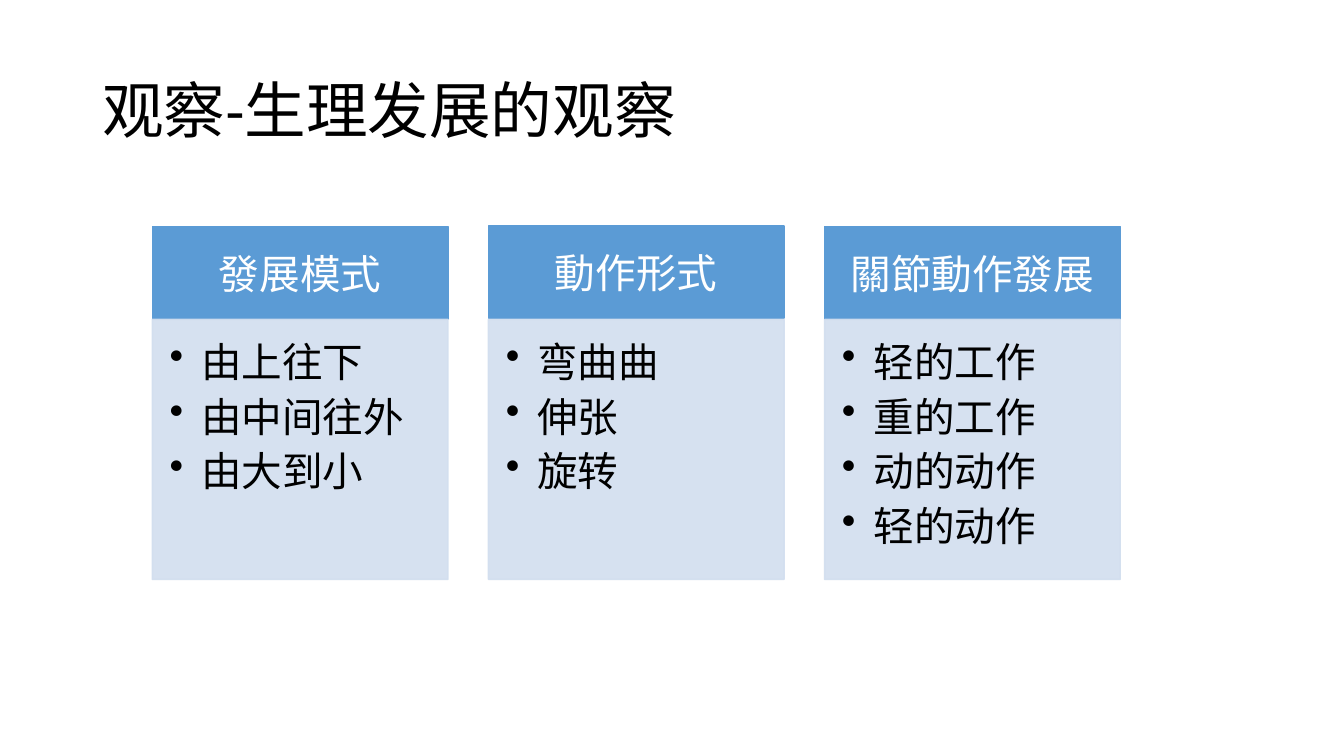
from dataclasses import dataclass

import lxml.etree
import pptx
import pptx.dml.color
import pptx.enum.shapes
import pptx.enum.text
import pptx.oxml.ns
import pptx.util

Pt = pptx.util.Pt
RGB = pptx.dml.color.RGBColor
Align = pptx.enum.text.PP_ALIGN
Anchor = pptx.enum.text.MSO_ANCHOR
qn = pptx.oxml.ns.qn


@dataclass(frozen=True)
class Theme:
    font: str = "Calibri"
    title_size: float = 44
    text_size: float = 29
    dark: RGB = RGB(0x00, 0x00, 0x00)
    light: RGB = RGB(0xFF, 0xFF, 0xFF)
    header: RGB = RGB(0x5B, 0x9B, 0xD5)
    body: RGB = RGB(0xD2, 0xDE, 0xEF)
    body_opacity: int = 90


@dataclass(frozen=True)
class Column:
    heading: str
    items: tuple[str, ...]
    header_top: float = 162


THEME = Theme()
COLUMNS = (
    Column("發展模式", ("由上往下", "由中间往外", "由大到小")),
    Column("動作形式", ("弯曲曲", "伸张", "旋转"), header_top=161.3),
    Column("關節動作發展", ("轻的工作", "重的工作", "动的动作", "轻的动作")),
)

# Column grid, in points
LEFT, STEP, WIDTH = 108.8, 240.1, 211.2
HEADER_HEIGHT, BODY_TOP, BODY_HEIGHT = 65.8, 228.1, 185.8
BULLET_INDENT = 22.5


def add_run(p, text: str, size: float, color: RGB) -> None:
    r = p.add_run()
    r.text = text
    r.font.name = THEME.font
    r.font.size = Pt(size)
    r.font.color.rgb = color


def set_frame(tf, anchor, insets: tuple[float, float, float, float]) -> None:
    tf.word_wrap = True
    tf.vertical_anchor = anchor
    tf.margin_left, tf.margin_top, tf.margin_right, tf.margin_bottom = map(Pt, insets)


def add_box(slide, left: float, top: float, height: float, color: RGB, opacity: int = 100):
    sp = slide.shapes.add_shape(pptx.enum.shapes.MSO_SHAPE.RECTANGLE,
                                Pt(left), Pt(top), Pt(WIDTH), Pt(height))
    sp.shadow.inherit = False
    sp.fill.solid()
    sp.fill.fore_color.rgb = color
    sp.line.color.rgb = color
    sp.line.width = Pt(1)
    if opacity < 100:
        for clr in sp._element.spPr.iter(qn("a:srgbClr")):
            lxml.etree.SubElement(clr, qn("a:alpha"), val=str(opacity * 1000))
    return sp


def add_bullet(p) -> None:
    pPr = p._p.get_or_add_pPr()
    pPr.set("marL", str(Pt(BULLET_INDENT)))
    pPr.set("indent", str(-Pt(BULLET_INDENT)))
    lxml.etree.SubElement(pPr, qn("a:buChar"), char="•")


def add_title(slide, text: str) -> None:
    sp = slide.shapes.add_textbox(Pt(66), Pt(28.8), Pt(828), Pt(104.4))
    set_frame(sp.text_frame, Anchor.MIDDLE, (7.2, 3.6, 7.2, 3.6))
    p = sp.text_frame.paragraphs[0]
    p.line_spacing = 0.9
    add_run(p, text, THEME.title_size, THEME.dark)


def add_column(slide, column: Column, left: float) -> None:
    # Heading
    sp = add_box(slide, left, column.header_top, HEADER_HEIGHT, THEME.header)
    set_frame(sp.text_frame, Anchor.MIDDLE, (16.5, 9.4, 16.5, 9.4))
    p = sp.text_frame.paragraphs[0]
    p.alignment = Align.CENTER
    add_run(p, column.heading, THEME.text_size, THEME.light)

    # Bulleted list
    sp = add_box(slide, left, BODY_TOP, BODY_HEIGHT, THEME.body, THEME.body_opacity)
    tf = sp.text_frame
    set_frame(tf, Anchor.TOP, (12.4, 12.4, 16.5, 18))
    for i, item in enumerate(column.items):
        p = tf.add_paragraph() if i else tf.paragraphs[0]
        p.alignment = Align.LEFT
        p.space_after = Pt(0.15 * THEME.text_size)
        add_bullet(p)
        add_run(p, item, THEME.text_size, THEME.dark)


def main() -> None:
    prs = pptx.Presentation()
    prs.slide_width, prs.slide_height = Pt(960), Pt(540)
    slide = prs.slides.add_slide(prs.slide_layouts[6])
    add_title(slide, "观察-生理发展的观察")
    for i, column in enumerate(COLUMNS):
        add_column(slide, column, LEFT + i * STEP)
    prs.save("out.pptx")


if __name__ == "__main__":
    main()
